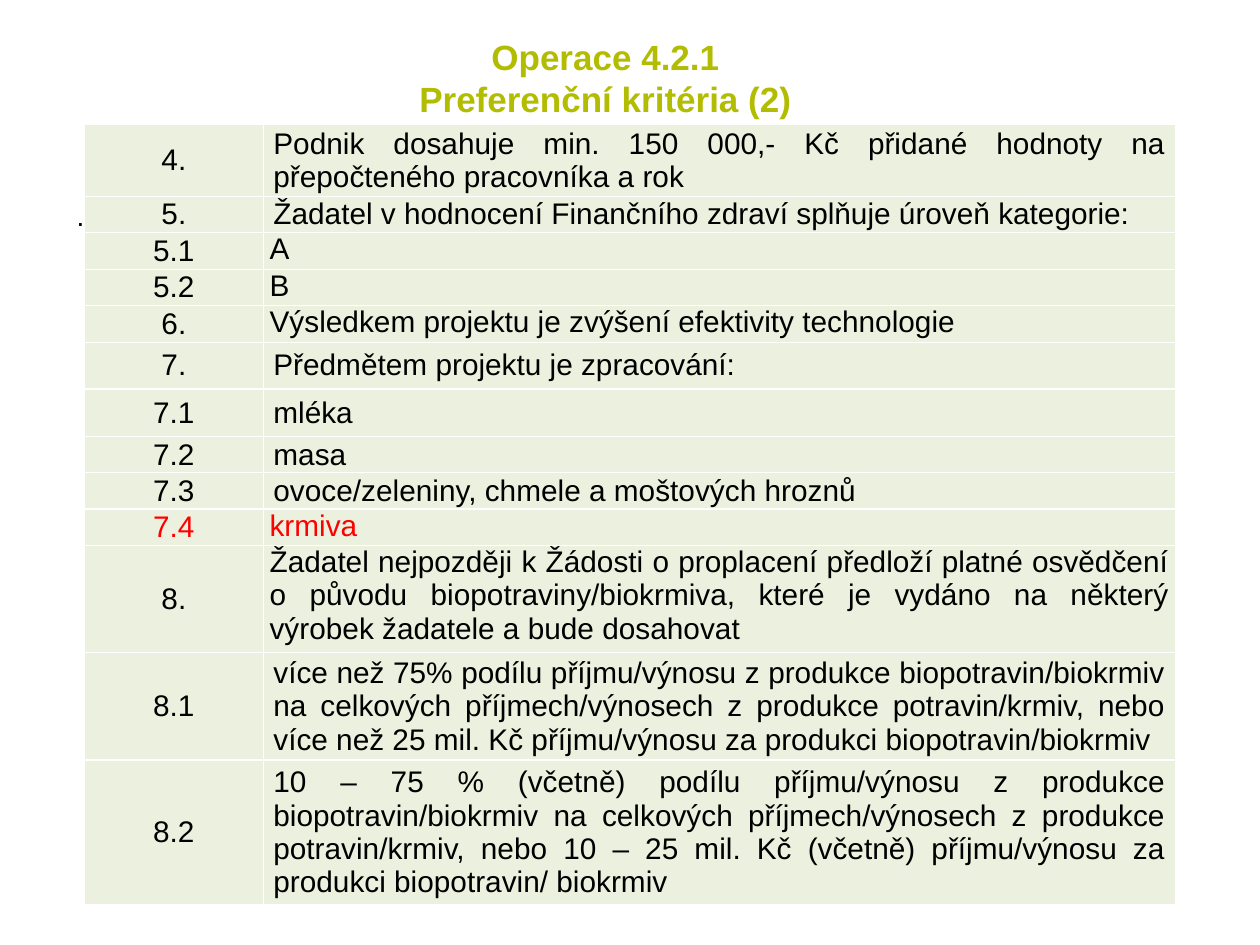
import pptx
import pptx.util
import pptx.dml.color
import pptx.enum.text
import pptx.oxml
import pptx.oxml.ns

Inches = pptx.util.Inches
Pt = pptx.util.Pt
RGBColor = pptx.dml.color.RGBColor
Align = pptx.enum.text.PP_ALIGN
Anchor = pptx.enum.text.MSO_ANCHOR

OLIVE = RGBColor(0xB2, 0xBC, 0x00)
BLACK = RGBColor(0x00, 0x00, 0x00)
RED = RGBColor(0xFF, 0x00, 0x00)
PALE = RGBColor(0xEB, 0xF1, 0xDE)
WHITE = RGBColor(0xFF, 0xFF, 0xFF)

WIDE, SLIM = 0.08, 0.05

ROWS = [
    (0.56, WIDE, "4.", "Podnik dosahuje min. 150 000,- Kč přidané hodnoty na přepočteného pracovníka a rok"),
    (0.29, WIDE, "5.", "Žadatel v hodnocení Finančního zdraví splňuje úroveň kategorie:"),
    (0.29, SLIM, "5.1", "A"),
    (0.29, SLIM, "5.2", "B"),
    (0.29, SLIM, "6.", "Výsledkem projektu je zvýšení efektivity technologie"),
    (0.37, WIDE, "7.", "Předmětem projektu je zpracování:"),
    (0.38, WIDE, "7.1", "mléka"),
    (0.28, WIDE, "7.2", "masa"),
    (0.29, WIDE, "7.3", "ovoce/zeleniny, chmele a moštových hroznů"),
    (0.29, SLIM, "7.4", "krmiva"),
    (0.84, SLIM, "8.", "Žadatel nejpozději k Žádosti o proplacení předloží platné osvědčení o původu biopotraviny/biokrmiva, které je vydáno na některý výrobek žadatele a bude dosahovat"),
    (0.84, WIDE, "8.1", "více než 75% podílu příjmu/výnosu z produkce biopotravin/biokrmiv na celkových příjmech/výnosech z produkce potravin/krmiv, nebo více než 25 mil. Kč příjmu/výnosu za produkci biopotravin/biokrmiv"),
    (1.15, WIDE, "8.2", "10 – 75 % (včetně) podílu příjmu/výnosu z produkce biopotravin/biokrmiv na celkových příjmech/výnosech z produkce potravin/krmiv, nebo 10 – 25 mil. Kč (včetně) příjmu/výnosu za produkci biopotravin/ biokrmiv"),
]


def write(frame, text, font="Arial", size=17, color=BLACK, bold=False,
          align=Align.JUSTIFY, space=None):
    para = frame.paragraphs[0]
    para.text = text
    para.alignment = align
    para.line_spacing = space
    for run in para.runs:
        run.font.name = font
        run.font.size = Pt(size)
        run.font.bold = bold
        run.font.color.rgb = color


class Deck:
    def __init__(self):
        self.file = pptx.Presentation()
        self.file.slide_width = Inches(10)
        self.file.slide_height = Inches(7.5)
        self.slide = self.file.slides.add_slide(self.file.slide_layouts[6])
        self.fill = PALE
        self.line = WHITE

    def text(self, text, left, top, width, height, pad=(0.1, 0.05), **style):
        box = self.slide.shapes.add_textbox(
            Inches(left), Inches(top), Inches(width), Inches(height))
        frame = box.text_frame
        frame.word_wrap = True
        frame.margin_left = frame.margin_right = Inches(pad[0])
        frame.margin_top = frame.margin_bottom = Inches(pad[1])
        write(frame, text, **style)

    def border(self, cell):
        props = cell._tc.get_or_add_tcPr()
        for index, side in enumerate(("lnL", "lnR", "lnT", "lnB")):
            props.insert(index, pptx.oxml.parse_xml(
                f'<a:{side} {pptx.oxml.ns.nsdecls("a")} w="{Pt(0.91)}">'
                f'<a:solidFill><a:srgbClr val="{self.line}"/></a:solidFill>'
                f'</a:{side}>'))

    def cell(self, cell, text, pad, anchor, **style):
        cell.fill.solid()
        cell.fill.fore_color.rgb = self.fill
        cell.margin_left = cell.margin_right = Inches(pad)
        cell.margin_top = cell.margin_bottom = 0
        cell.vertical_anchor = anchor
        write(cell.text_frame, text, **style)
        self.border(cell)

    def table(self, rows, left, top, widths):
        height = sum(row[0] for row in rows)
        grid = self.slide.shapes.add_table(
            len(rows), len(widths), Inches(left), Inches(top),
            Inches(sum(widths)), Inches(height)).table
        grid.first_row = grid.horz_banding = False
        for column, width in zip(grid.columns, widths):
            column.width = Inches(width)
        for index, (height, pad, mark, text) in enumerate(rows):
            grid.rows[index].height = Inches(height)
            red = mark == "7.4"
            color = RED if red else BLACK
            anchor = Anchor.TOP if pad == SLIM else Anchor.MIDDLE
            self.cell(grid.cell(index, 0), mark, WIDE, Anchor.MIDDLE,
                      color=color, align=Align.CENTER)
            self.cell(grid.cell(index, 1), text, pad, anchor, color=color)


def main():
    deck = Deck()
    deck.text("Operace 4.2.1\nPreferenční kritéria (2)", 0.75, 0.28, 8.11, 0.7,
              pad=(0.1, 0), size=20, color=OLIVE, bold=True, align=Align.CENTER)
    deck.text(".", 0.51, 1.47, 8.66, 5.12, size=16, space=1.2)
    deck.table(ROWS, 0.67, 0.99, (1.42, 7.24))
    deck.file.save("out.pptx")


if __name__ == "__main__":
    main()
